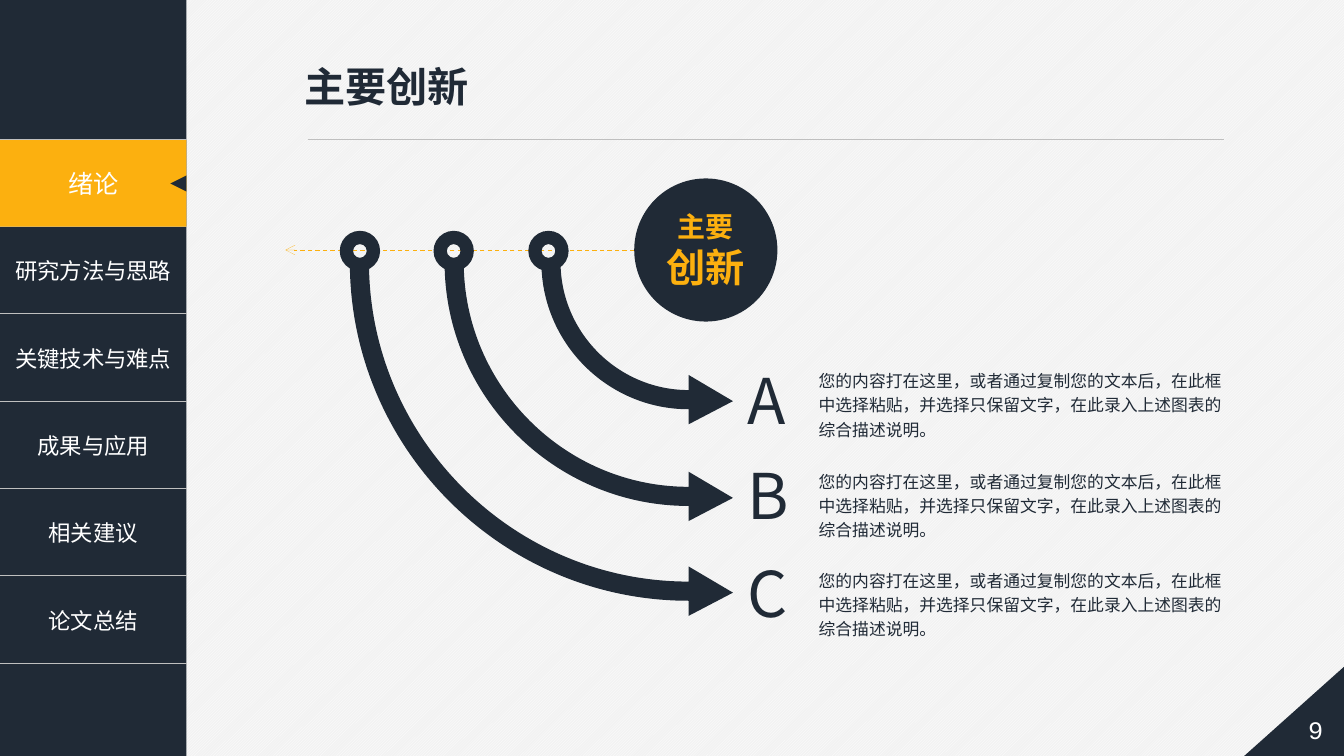
from lxml import etree
from pptx import Presentation
from pptx.dml.color import RGBColor
from pptx.enum import dml, shapes, text
from pptx.oxml import ns
from pptx.util import Inches, Pt

NAVY, AMBER, GREY, WHITE = "202A36", "FCB00F", "BFBFBF", "FFFFFF"
SANS = "Noto Sans CJK SC"
CENTER = text.PP_ALIGN.CENTER
CHAPTERS = ["", "研究方法与思路", "关键技术与难点", "成果与应用", "相关建议", "论文总结"]
SUMMARY = ("您的内容打在这里，或者通过复制您的文本后，在此框中选择粘贴，"
           "并选择只保留文字，在此录入上述图表的综合描述说明。")
PIVOT_X, PIVOT_Y = 6.83, 2.6
BAND = 0.19
KAPPA = 0.55
INNOVATIONS = [("A", 5.24, 1.46, 3.54, 3.6),
               ("B", 4.3, 2.42, 4.48, 4.6),
               ("C", 3.37, 3.36, 5.46, 5.58)]


def rgb(color):
    return RGBColor.from_string(color)


def add_xml(parent, tag, **attributes):
    return etree.SubElement(parent, ns.qn(tag), attributes)


def paint(shape, color):
    shape.shadow.inherit = False
    shape.fill.solid()
    shape.fill.fore_color.rgb = rgb(color)
    shape.line.fill.background()
    return shape


def add_figure(slide, kind, left, top, width, height, color=NAVY):
    return paint(slide.shapes.add_shape(kind, Inches(left), Inches(top),
                                        Inches(width), Inches(height)), color)


def write(frame, lines, color, face=SANS, align=None, bold=None, spacing=None):
    for index, (words, size) in enumerate(lines):
        paragraph = frame.add_paragraph() if index else frame.paragraphs[0]
        paragraph.text = words
        paragraph.alignment = align
        paragraph.line_spacing = spacing
        font = paragraph.font
        font.size, font.bold, font.name = Pt(size), bold, face
        font.color.rgb = rgb(color)
        add_xml(paragraph._p.pPr.find(ns.qn("a:defRPr")), "a:ea", typeface=face)


def set_insets(frame, side, edge):
    frame.margin_left = frame.margin_right = Inches(side)
    frame.margin_top = frame.margin_bottom = Inches(edge)


def add_label(slide, left, top, width, height, words, size, color=NAVY, wrap=False,
              inset=(0.08, 0.04), anchor=text.MSO_ANCHOR.MIDDLE, **style):
    frame = slide.shapes.add_textbox(Inches(left), Inches(top),
                                     Inches(width), Inches(height)).text_frame
    frame.word_wrap = wrap
    frame.vertical_anchor = anchor
    set_insets(frame, *inset)
    write(frame, [(words, size)], color, **style)


def add_line(slide, start, end, color):
    line = slide.shapes.add_connector(shapes.MSO_CONNECTOR.STRAIGHT,
                                      *map(Inches, start + end))
    line.line.color.rgb = rgb(color)
    add_xml(line._element.spPr, "a:effectLst")
    return line


def set_borders(cell):
    properties = cell._tc.get_or_add_tcPr()
    for position, side in enumerate("LRTB"):
        border = etree.Element(ns.qn(f"a:ln{side}"), w=str(Pt(1)))
        if side in "TB":
            add_xml(add_xml(border, "a:solidFill"), "a:srgbClr", val=GREY)
        else:
            add_xml(border, "a:noFill")
        properties.insert(position, border)


def add_menu(slide):
    add_figure(slide, shapes.MSO_SHAPE.RECTANGLE, 0, 0, 1.85, 7.5)
    menu = slide.shapes.add_table(len(CHAPTERS), 1, Inches(0), Inches(1.38),
                                  Inches(1.85), Inches(5.2)).table
    menu.first_row = menu.horz_banding = False
    for row, chapter in enumerate(CHAPTERS):
        cell = menu.cell(row, 0)
        cell.fill.background()
        set_borders(cell)
        cell.vertical_anchor = text.MSO_ANCHOR.MIDDLE
        if chapter:
            write(cell.text_frame, [(chapter, 16)], WHITE, align=CENTER)
    current = add_figure(slide, shapes.MSO_SHAPE.RECTANGLE, 0, 1.39, 1.85, 0.86, AMBER)
    write(current.text_frame, [("绪论", 18)], WHITE, align=CENTER)
    marker = add_figure(slide, shapes.MSO_SHAPE.ISOSCELES_TRIANGLE, 1.69, 1.74, 0.16, 0.16)
    marker.rotation = 270


def add_page_corner(slide):
    corner = add_figure(slide, shapes.MSO_SHAPE.RIGHT_TRIANGLE, 12.33, 6.58, 1.04, 0.93)
    corner._element.spPr.xfrm.set("flipH", "1")
    add_label(slide, 12.8, 6.96, 0.5, 0.55, "9", 18, WHITE, face="Courier New", align=CENTER)


def add_hub(slide):
    hub = add_figure(slide, shapes.MSO_SHAPE.OVAL, 6.29, 1.77, 1.42, 1.42)
    set_insets(hub.text_frame, 0.08, 0.04)
    write(hub.text_frame, [("主要", 20), ("创新", 28)], AMBER, align=CENTER, bold=True)
    axis = add_line(slide, (6.29, 2.48), (2.83, 2.48), AMBER)
    axis.line.dash_style = dml.MSO_LINE.DASH
    stroke = axis.line._get_or_add_ln()
    stroke.set("w", "0")
    add_xml(stroke, "a:tailEnd", type="arrow")


def quarter_arc(radius):
    left, bottom, pull = PIVOT_X - radius, PIVOT_Y + radius, radius * KAPPA
    return [(PIVOT_X, bottom), (PIVOT_X - pull, bottom),
            (left, PIVOT_Y + pull), (left, PIVOT_Y)]


def bend(segments):
    curve = etree.Element(ns.qn("a:cubicBezTo"))
    segments[0].addprevious(curve)
    for segment in segments:
        curve.append(segment[0])
        segment.getparent().remove(segment)


def add_curved_arrow(slide, radius):
    bottom = PIVOT_Y + radius
    head = [(PIVOT_X, bottom - 0.34), (PIVOT_X + 0.44, bottom - 0.08),
            (PIVOT_X, bottom + 0.15)]
    outline = quarter_arc(radius) + quarter_arc(radius - BAND)[::-1] + head
    points = [(Inches(x), Inches(y)) for x, y in outline]
    builder = slide.shapes.build_freeform(*points[0])
    builder.add_line_segments(points[1:], close=True)
    arrow = paint(builder.convert_to_shape(), NAVY)
    segments = list(arrow._element.iter(ns.qn("a:lnTo")))
    bend(segments[:3])
    bend(segments[4:7])


def add_innovation(slide, letter, ring_left, radius, letter_top, summary_top):
    ring = add_figure(slide, shapes.MSO_SHAPE.DONUT, ring_left, 2.29, 0.4, 0.4)
    ring.adjustments[0] = 0.33
    add_curved_arrow(slide, radius)
    add_label(slide, 7.33, letter_top, 0.6, 0.84, letter, 45)
    add_label(slide, 8.04, summary_top, 4.24, 0.81, SUMMARY, 12, wrap=True,
              anchor=text.MSO_ANCHOR.TOP, spacing=1.2)


def main():
    deck = Presentation()
    deck.slide_width, deck.slide_height = Inches(13.33), Inches(7.5)
    slide = deck.slides.add_slide(deck.slide_layouts[6])
    backdrop = slide.background.fill
    backdrop.patterned()
    backdrop.pattern = dml.MSO_PATTERN.LIGHT_UPWARD_DIAGONAL
    backdrop.fore_color.rgb = rgb(WHITE)
    backdrop.back_color.rgb = rgb("F2F2F2")
    add_menu(slide)
    rule = add_line(slide, (3.05, 1.38), (12.14, 1.38), GREY)
    rule.line.width = Pt(0.5)
    add_page_corner(slide)
    add_hub(slide)
    for innovation in INNOVATIONS:
        add_innovation(slide, *innovation)
    add_label(slide, 2.92, 0.56, 1.85, 0.59, "主要创新", 29.4,
              inset=(0.1, 0.05), face="Arial", bold=True)
    deck.save("out.pptx")


if __name__ == "__main__":
    main()
